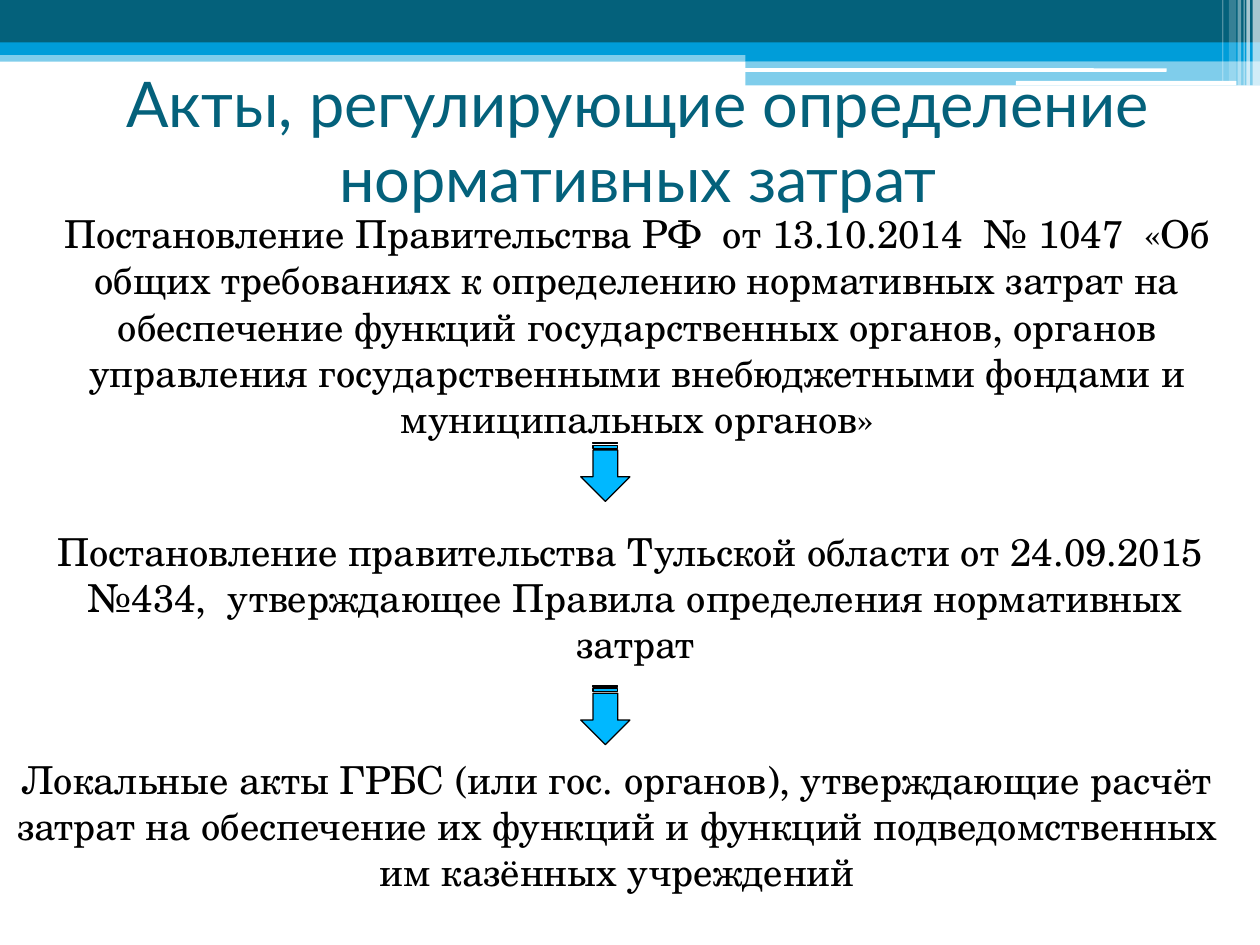
import pptx
import pptx.util
import pptx.dml.color
import pptx.enum.shapes
import pptx.enum.text
import pptx.oxml.ns
import lxml.etree

Pt = pptx.util.Pt
RGB = pptx.dml.color.RGBColor
SHAPE = pptx.enum.shapes.MSO_SHAPE
ANCHOR = pptx.enum.text.MSO_ANCHOR
CENTER = pptx.enum.text.PP_ALIGN.CENTER
qn = pptx.oxml.ns.qn

TEAL = RGB(0x04, 0x61, 0x7B)
BLUE = RGB(0x00, 0x9D, 0xD9)
SKY = RGB(0x00, 0xB8, 0xFF)
WHITE = RGB(0xFF, 0xFF, 0xFF)
BLACK = RGB(0, 0, 0)

TITLE = "Акты, регулирующие определение нормативных затрат"
TITLE_BOX = (40.5, 43.2, 648, 73.4)
ACTS = [
    ("Постановление Правительства РФ  от 13.10.2014  № 1047  «Об общих требованиях к определению "
     "нормативных затрат на обеспечение функций государственных органов, органов управления "
     "государственными внебюджетными фондами и муниципальных органов»",
     (0, 116.6, 720, 153.4), 8.64, 3),
    ("Постановление правительства Тульской области от 24.09.2015  №434,  утверждающее Правила "
     "определения нормативных затрат",
     (0, 298.1, 717.8, 79.2), 8.64, 3),
    ("Локальные акты ГРБС (или гос. органов), утверждающие расчёт затрат на обеспечение их функций "
     "и функций подведомственных им казённых учреждений",
     (0, 428.4, 705.6, 87.1), 0, 0),
]
ARROW_LEFT, ARROW_TOPS, ARROW_SIZE = 329, (255.6, 394.6), (33.8, 28.1)

BANDS = [
    (SHAPE.RECTANGLE, (0, 28.8, 720, 6.5), BLUE, 50),
    (SHAPE.RECTANGLE, (0, 0, 720, 24.5), TEAL, 100),
    (SHAPE.RECTANGLE, (0, 24.2, 720, 7.2), BLUE, 100),
    (SHAPE.RECTANGLE, (426, 28, 294, 7), BLUE, 100),
    (SHAPE.RECTANGLE, (426, 34.6, 294, 14.2), BLUE, 50),
    (SHAPE.ROUNDED_RECTANGLE, (425.5, 39, 241.2, 2), WHITE, 100),
    (SHAPE.ROUNDED_RECTANGLE, (580.5, 46.2, 126, 2.6), WHITE, 100),
]
STRIPES = [
    (715.8, 4.2, 49, 65), (712.2, 2, 49, 65), (710.6, 0.7, 49, 60),
    (707.2, 2, 49, 40), (702.2, 4.2, 46.2, 20), (698.4, 0.7, 46.2, 30),
]


def points(box):
    return [Pt(v) for v in box]


def set_format(obj, values):
    for name, value in values.items():
        setattr(obj, name, value)


def add_shape(s, kind, box, color, alpha=100):
    sp = s.shapes.add_shape(kind, *points(box))
    sp.shadow.inherit = False
    sp.fill.solid()
    sp.fill.fore_color.rgb = color
    sp.line.fill.background()
    if alpha < 100:
        clr = sp.fill._xPr.find(".//" + qn("a:srgbClr"))
        lxml.etree.SubElement(clr, qn("a:alpha")).set("val", str(alpha * 1000))
    return sp


def write_text(sp, text, font, color, anchor, indent=0, before=0):
    tf = sp.text_frame
    set_format(tf, {
        "word_wrap": True, "vertical_anchor": anchor,
        "auto_size": pptx.enum.text.MSO_AUTO_SIZE.NONE,
    })
    p = tf.paragraphs[0]
    set_format(p, {"alignment": CENTER, "space_before": Pt(before)})
    if indent:
        p._p.get_or_add_pPr().set("marL", str(Pt(indent)))
    r = p.add_run()
    r.text = text
    set_format(r.font, font)
    r.font.color.rgb = color


prs = pptx.Presentation()
set_format(prs, {"slide_width": Pt(720), "slide_height": Pt(540)})
s = prs.slides.add_slide(prs.slide_layouts[5])

for kind, box, color, alpha in BANDS:
    add_shape(s, kind, box, color, alpha)
for left, width, height, alpha in STRIPES:
    add_shape(s, SHAPE.RECTANGLE, (left, 0, width, height), WHITE, alpha)

title = s.shapes.title
set_format(title, dict(zip(("left", "top", "width", "height"), points(TITLE_BOX))))
write_text(title, TITLE, {"name": "Lato", "size": Pt(36)}, TEAL, ANCHOR.MIDDLE)
s.shapes._spTree.append(title._element)

for text, box, indent, before in ACTS:
    sp = s.shapes.add_textbox(*points(box))
    write_text(sp, text, {"name": "TeX Gyre Schola", "size": Pt(22)}, BLACK, ANCHOR.TOP, indent, before)

for top in ARROW_TOPS:
    sp = add_shape(s, SHAPE.STRIPED_RIGHT_ARROW, (ARROW_LEFT, top, *ARROW_SIZE), SKY)
    sp.rotation = 90
    sp.line.color.rgb = BLACK
    sp.line.width = Pt(0.75)

prs.save("out.pptx")
